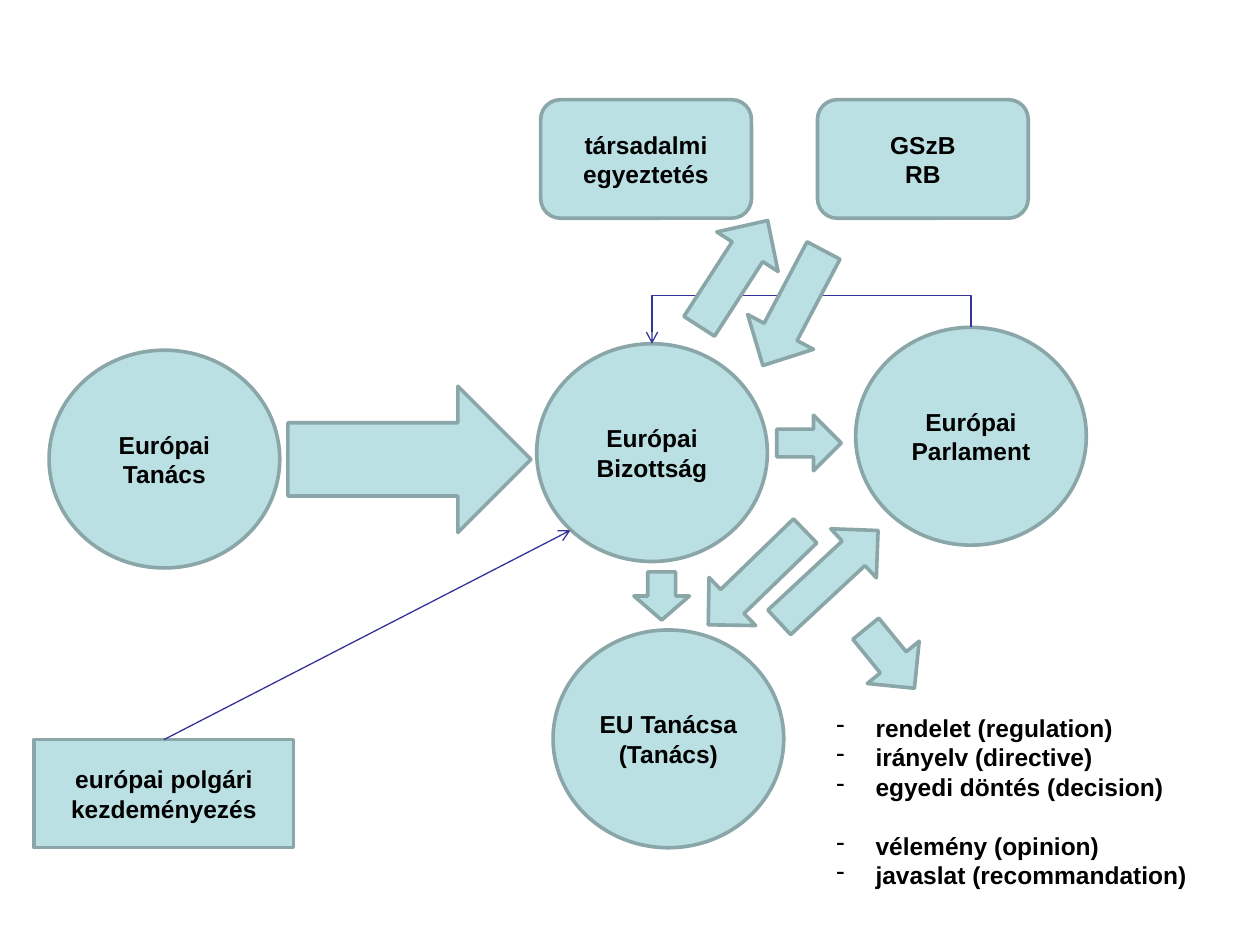
import pptx
import pptx.util
import pptx.dml.color
import pptx.enum.shapes
import pptx.enum.text
import pptx.oxml.ns
from lxml import etree

Cm, Pt = pptx.util.Cm, pptx.util.Pt
SHAPE = pptx.enum.shapes.MSO_SHAPE
CONNECTOR = pptx.enum.shapes.MSO_CONNECTOR
ALIGN = pptx.enum.text.PP_ALIGN
ANCHOR = pptx.enum.text.MSO_ANCHOR
qn = pptx.oxml.ns.qn

COLORS = {"fill": "BBE0E3", "outline": "8AA6A8", "text": "000000", "link": "333399"}

# Content: sizes and positions in centimetres
CIRCLE_SIZE = (4.65, 4.39)
BOX_SIZE = (4.25, 2.39)
INSTITUTIONS = {
    "european_council": (["Európai Tanács"], 0.99, 7.06),
    "commission": (["Európai Bizottság"], 10.82, 6.93),
    "parliament": (["Európai Parlament"], 17.25, 6.6),
    "council": (["EU Tanácsa (Tanács)"], 11.15, 12.7),
}
CONSULTED = [
    (["társadalmi egyeztetés"], 10.9, 2.01),
    (["GSzB", "RB"], 16.48, 2.01),
]
INITIATIVE = (["európai polgári kezdeményezés"], 0.69, 14.91, 5.23, 2.18)
BINDING_ACTS = ["rendelet (regulation)", "irányelv (directive)", "egyedi döntés (decision)"]
OTHER_ACTS = ["vélemény (opinion)", "javaslat (recommandation)"]

# Block arrows: left, top, width, height, rotation, head length over width
ARROWS = [
    (6.78, 6.81, 2.95, 4.9, 270, 0.5),
    (15.75, 8.28, 1.12, 1.3, 270, 0.5),
    (12.78, 11.53, 1.12, 0.97, 0, 0.5),
    (14.58, 10.29, 1.35, 2.72, 45.9, 0.5),
    (16.03, 10.26, 1.35, 2.72, 227.1, 0.5),
    (17.27, 12.5, 1.35, 1.55, 320.8, 0.5),
    (14.05, 4.24, 1.47, 2.54, 212.9, 0.51),
    (15.24, 4.9, 1.5, 2.62, 27.8, 0.51),
]


def rgb(name):
    return pptx.dml.color.RGBColor.from_string(COLORS[name])


def write(frame, lines, align=ALIGN.CENTER, anchor=ANCHOR.MIDDLE, bullet=None, gaps=None):
    """Fill a text frame; gaps maps a line number to its space before in points."""
    frame.word_wrap = True
    frame.vertical_anchor = anchor
    for number, line in enumerate(lines):
        paragraph = frame.paragraphs[0] if number == 0 else frame.add_paragraph()
        if bullet:
            properties = paragraph._p.get_or_add_pPr()
            properties.set("marL", str(Cm(0.79)))
            properties.set("indent", str(-Cm(0.79)))
            etree.SubElement(properties, qn("a:buChar"), char=bullet)
        paragraph.alignment = align
        if gaps and number in gaps:
            paragraph.space_before = Pt(gaps[number])
        run = paragraph.add_run()
        run.text = line
        run.font.name = "Arial"
        run.font.size = Pt(14)
        run.font.bold = True
        run.font.color.rgb = rgb("text")


def add_block(slide, kind, left, top, width, height, lines=()):
    block = slide.shapes.add_shape(kind, Cm(left), Cm(top), Cm(width), Cm(height))
    block.shadow.inherit = False
    block.fill.solid()
    block.fill.fore_color.rgb = rgb("fill")
    block.line.color.rgb = rgb("outline")
    block.line.width = Pt(2.08)
    if lines:
        write(block.text_frame, lines)
    return block


def add_link(slide, kind, start, end):
    link = slide.shapes.add_connector(kind, *(Cm(value) for value in start + end))
    link.line.color.rgb = rgb("link")
    link.line.width = Pt(0.75)
    etree.SubElement(link.line._get_or_add_ln(), qn("a:tailEnd"), type="arrow")
    etree.SubElement(link._element.spPr, qn("a:effectLst"))
    return link


def main():
    deck = pptx.Presentation()
    deck.slide_width, deck.slide_height = Cm(25.4), Cm(19.05)
    slide = deck.slides.add_slide(deck.slide_layouts[6])

    # Institutions and the citizens' initiative
    for lines, left, top in INSTITUTIONS.values():
        add_block(slide, SHAPE.OVAL, left, top, *CIRCLE_SIZE, lines)
    lines, *place = INITIATIVE
    initiative = add_block(slide, SHAPE.RECTANGLE, *place, lines)

    # Legal acts
    acts = slide.shapes.add_textbox(Cm(16.61), Cm(14.25), Cm(8.79), Cm(3.84))
    write(acts.text_frame, BINDING_ACTS + OTHER_ACTS, align=ALIGN.LEFT,
          anchor=ANCHOR.TOP, bullet="-", gaps={len(BINDING_ACTS): 16.8})

    # Initiative to Commission
    proposal = add_link(slide, CONNECTOR.STRAIGHT, (3.3, 14.91), (11.5, 10.69))
    proposal.begin_connect(initiative, 0)

    # Parliament to Commission, top to top: a quarter-turned elbow
    request = add_link(slide, CONNECTOR.ELBOW, (0, 0), (1, 1))
    _, commission_left, commission_top = INSTITUTIONS["commission"]
    _, parliament_left, parliament_top = INSTITUTIONS["parliament"]
    span = parliament_left - commission_left
    drop = commission_top - parliament_top
    rise = 0.64
    middle_x = (parliament_left + commission_left + CIRCLE_SIZE[0]) / 2
    middle_y = (parliament_top + commission_top) / 2
    request.left, request.top = Cm(middle_x - drop / 2), Cm(middle_y - span / 2)
    request.width, request.height = Cm(drop), Cm(span)
    transform = request._element.spPr.find(qn("a:xfrm"))
    for key, value in (("rot", 270 * 60000), ("flipH", 1), ("flipV", 1)):
        transform.set(key, str(value))
    geometry = request._element.spPr.find(qn("a:prstGeom"))
    guides = geometry.find(qn("a:avLst"))
    if guides is None:
        guides = etree.SubElement(geometry, qn("a:avLst"))
    etree.SubElement(guides, qn("a:gd"), name="adj1",
                     fmla=f"val {round(-rise / drop * 100000)}")

    # Block arrows
    for *place, rotation, head in ARROWS:
        arrow = add_block(slide, SHAPE.DOWN_ARROW, *place)
        arrow.rotation = rotation
        arrow.adjustments[1] = head

    # Consulted bodies
    for lines, left, top in CONSULTED:
        add_block(slide, SHAPE.ROUNDED_RECTANGLE, left, top, *BOX_SIZE, lines)

    deck.save("out.pptx")


if __name__ == "__main__":
    main()
